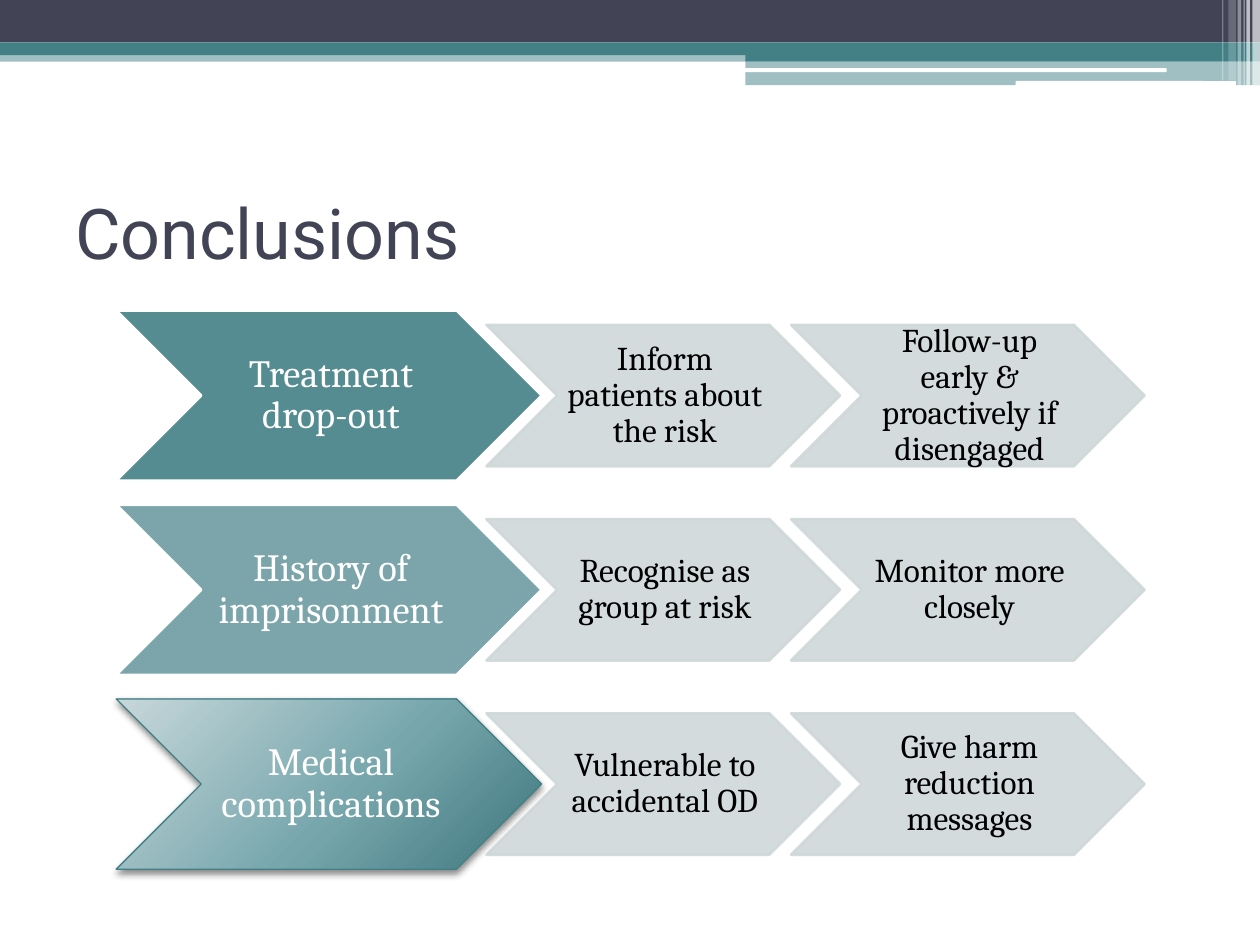
from dataclasses import dataclass

from lxml.etree import SubElement
from pptx import Presentation
from pptx.dml.color import RGBColor
from pptx.dml.fill import FillFormat
from pptx.enum.shapes import MSO_SHAPE as Preset
from pptx.enum.text import MSO_ANCHOR as Anchor, PP_ALIGN as Align
from pptx.oxml import parse_xml
from pptx.oxml.ns import nsdecls, qn
from pptx.shapes.autoshape import Shape
from pptx.slide import Slide
from pptx.util import Pt


@dataclass(frozen=True)
class Theme:
    dark: str = "424456"
    teal: str = "438086"
    pale: str = "CFD8D9"
    white: str = "FFFFFF"
    black: str = "000000"
    gradient: tuple = ((0, "C7D7DA"), (55, "77A7AD"), (100, "3E777D"))
    title_font: str = "Roboto"
    body_font: str = "Cambria"
    title_size: float = 40
    lead_size: float = 22
    step_size: float = 19


@dataclass(frozen=True)
class Box:
    left: float
    top: float
    width: float
    height: float

    def lengths(self) -> tuple:
        return Pt(self.left), Pt(self.top), Pt(self.width), Pt(self.height)


@dataclass(frozen=True)
class Bar:
    box: Box
    color: str
    opacity: int = 100
    preset: Preset = Preset.RECTANGLE


@dataclass(frozen=True)
class Row:
    lead: str
    steps: tuple
    opacity: int = 100
    glossy: bool = False


THEME = Theme()

# Header bands, then the translucent stripes at the right edge
BARS = [
    Bar(Box(0, 28.8, 720, 6.5), THEME.teal, 50),
    Bar(Box(0, 0, 720, 24.3), THEME.dark),
    Bar(Box(0, 24.3, 720, 7.2), THEME.teal),
    Bar(Box(426, 28, 294, 7), THEME.teal),
    Bar(Box(426, 34.7, 294, 14), THEME.teal, 50),
    Bar(Box(425.5, 39, 241.2, 2.2), THEME.white, preset=Preset.ROUNDED_RECTANGLE),
    Bar(Box(580.3, 46.3, 126, 2.8), THEME.white, preset=Preset.ROUNDED_RECTANGLE),
] + [
    Bar(Box(left, 0, width, height), THEME.white, opacity)
    for left, width, height, opacity in [
        (715.6, 4.4, 48.7, 65), (712.2, 2, 48.7, 65), (710.6, 0.7, 48.7, 60),
        (707.2, 2, 48.7, 40), (702, 4.3, 46.1, 20), (698.4, 0.7, 46.1, 30),
    ]
]

ROWS = [
    Row("Treatment drop-out",
        ("Inform patients about the risk",
         "Follow-up early & proactively if disengaged"), opacity=90),
    Row("History of imprisonment",
        ("Recognise as group at risk", "Monitor more closely"), opacity=70),
    Row("Medical complications",
        ("Vulnerable to accidental OD", "Give harm reduction messages"), glossy=True),
]

TITLE_BOX = Box(36, 90, 648, 84.2)
ROW_TOP, ROW_PITCH = 177.4, 111
LEAD_LEFT, LEAD_WIDTH, LEAD_HEIGHT = 66.4, 243.2, 97.3
STEP_LEFT, STEP_PITCH, STEP_WIDTH, STEP_HEIGHT = 278, 174.1, 202, 80.8


def set_solid(fill: FillFormat, color: str, opacity: int = 100) -> None:
    fill.solid()
    fill.fore_color.rgb = RGBColor.from_string(color)
    if opacity < 100:
        color_element = fill._xPr.find(qn("a:solidFill"))[0]
        SubElement(color_element, qn("a:alpha"), val=str(opacity * 1000))


def add_preset(slide: Slide, preset: Preset, box: Box, color: str,
               opacity: int = 100) -> Shape:
    shape = slide.shapes.add_shape(preset, *box.lengths())
    shape.shadow.inherit = False
    set_solid(shape.fill, color, opacity)
    shape.line.fill.background()
    return shape


def add_outline(shape: Shape, color: str, width: float, opacity: int = 100) -> None:
    shape.line.width = Pt(width)
    set_solid(shape.line.fill, color, opacity)


def add_gloss(shape: Shape) -> None:
    """Give the shape a radial gradient and a soft shadow below."""
    properties = shape._element.spPr
    stops = "".join(
        f'<a:gs pos="{position * 1000}"><a:srgbClr val="{color}"/></a:gs>'
        for position, color in THEME.gradient)
    properties.replace(properties.find(qn("a:solidFill")), parse_xml(
        f'<a:gradFill {nsdecls("a")} rotWithShape="1"><a:gsLst>{stops}</a:gsLst>'
        '<a:path path="circle"><a:fillToRect l="-40000" t="-90000" r="140000"'
        ' b="190000"/></a:path></a:gradFill>'))
    shadow = SubElement(properties.find(qn("a:effectLst")), qn("a:outerShdw"),
                        blurRad=str(Pt(4)), dist=str(Pt(2)), dir="5400000",
                        rotWithShape="0")
    shadow_color = SubElement(shadow, qn("a:srgbClr"), val=THEME.black)
    SubElement(shadow_color, qn("a:alpha"), val="45000")


def add_text(slide: Slide, box: Box, text: str, font_name: str, size: float,
             color: str) -> Shape:
    shape = slide.shapes.add_textbox(*box.lengths())
    text_frame = shape.text_frame
    text_frame.text = text
    text_frame.word_wrap = True
    text_frame.vertical_anchor = Anchor.MIDDLE
    font = text_frame.paragraphs[0].runs[0].font
    font.name, font.size = font_name, Pt(size)
    font.color.rgb = RGBColor.from_string(color)
    return shape


def add_label(slide: Slide, chevron: Box, text: str, size: float, color: str,
              margin: float) -> None:
    """Centre text between the notch and the shoulder of a chevron."""
    inner = Box(chevron.left + chevron.height / 2, chevron.top,
                chevron.width - chevron.height, chevron.height)
    text_frame = add_text(slide, inner, text, THEME.body_font, size, color).text_frame
    text_frame.margin_left, text_frame.margin_right = Pt(2 * margin), Pt(0)
    text_frame.margin_top = text_frame.margin_bottom = Pt(margin)
    paragraph = text_frame.paragraphs[0]
    paragraph.alignment = Align.CENTER
    paragraph.line_spacing = 0.9


def add_row(slide: Slide, row: Row, top: float) -> None:
    lead_box = Box(LEAD_LEFT, top, LEAD_WIDTH, LEAD_HEIGHT)
    lead = add_preset(slide, Preset.CHEVRON, lead_box, THEME.teal, row.opacity)
    if row.glossy:
        add_gloss(lead)
        add_outline(lead, THEME.teal, 0.75)
    else:
        add_outline(lead, THEME.white, 1.5)
    add_label(slide, lead_box, row.lead, THEME.lead_size, THEME.white, 1.1)

    step_top = top + (LEAD_HEIGHT - STEP_HEIGHT) / 2
    for column, text in enumerate(row.steps):
        step_box = Box(STEP_LEFT + column * STEP_PITCH, step_top,
                       STEP_WIDTH, STEP_HEIGHT)
        step = add_preset(slide, Preset.CHEVRON, step_box, THEME.pale, 90)
        add_outline(step, THEME.pale, 1.5, 90)
        add_label(slide, step_box, text, THEME.step_size, THEME.black, 0.95)


def main() -> None:
    presentation = Presentation()
    presentation.slide_width, presentation.slide_height = Pt(720), Pt(540)
    slide = presentation.slides.add_slide(presentation.slide_layouts[6])

    # Header
    for bar in BARS:
        add_preset(slide, bar.preset, bar.box, bar.color, bar.opacity)

    # Title
    add_text(slide, TITLE_BOX, "Conclusions", THEME.title_font,
             THEME.title_size, THEME.dark)

    # Chevron rows
    for index, row in enumerate(ROWS):
        add_row(slide, row, ROW_TOP + index * ROW_PITCH)

    presentation.save("out.pptx")


if __name__ == "__main__":
    main()
